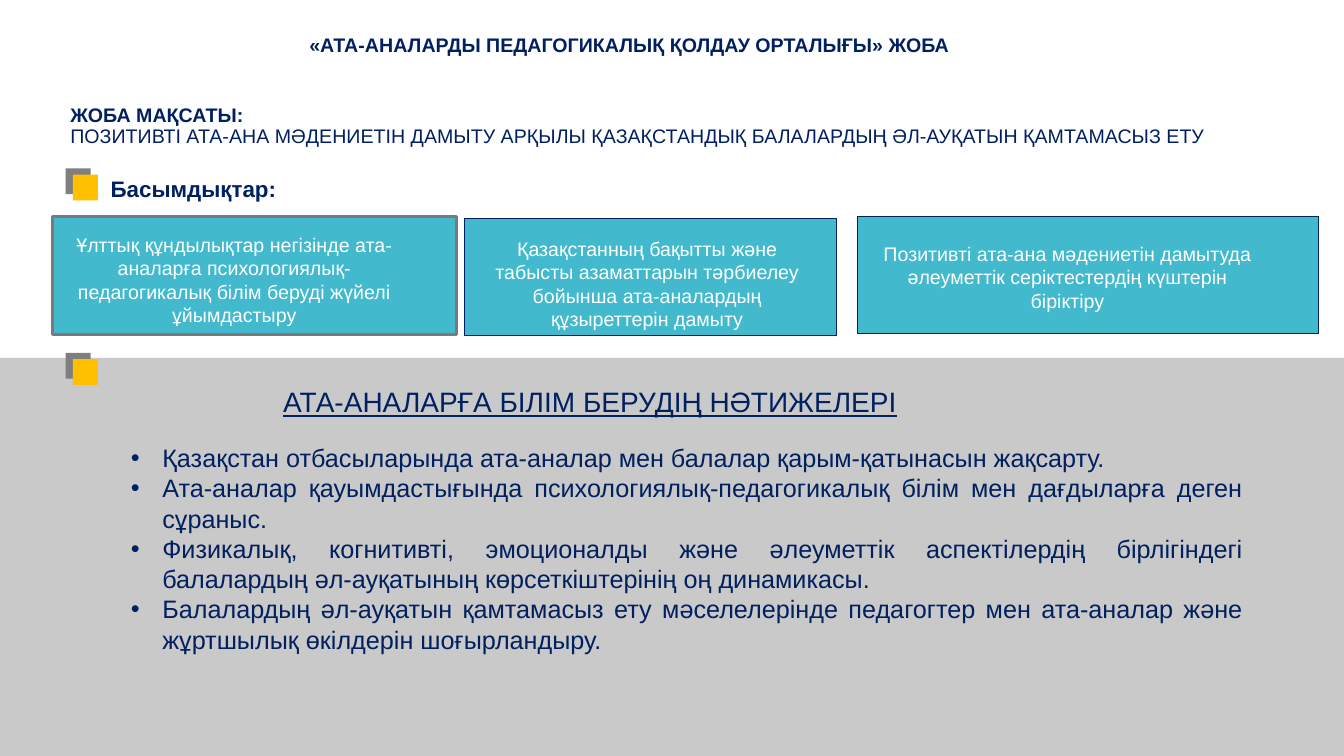
from lxml.etree import SubElement
from pptx import Presentation
from pptx.dml.color import RGBColor
from pptx.enum.shapes import MSO_SHAPE
from pptx.enum.text import MSO_AUTO_SIZE, PP_ALIGN
from pptx.oxml.ns import qn
from pptx.util import Pt

NAVY = "002060"
WHITE = "FFFFFF"
TEAL = "43B9CD"
GREY = "7A7A7A"

CARDS = [
    ((37.5, 154.8, 288.7, 84.2), GREY, 2, (31.7, 162.7, 271.4, 74.9),
     "Ұлттық құндылықтар негізінде ата-аналарға психологиялық-педагогикалық "
     "білім беруді жүйелі ұйымдастыру"),
    ((331.9, 156.2, 265.7, 83.5), NAVY, 1, (337, 165.6, 250.6, 74.9),
     "Қазақстанның бақытты және табысты азаматтарын тәрбиелеу бойынша "
     "ата-аналардың құзыреттерін дамыту"),
    ((612.7, 154.8, 329, 83.5), NAVY, 1, (615.6, 169.2, 293.8, 58.3),
     "Позитивті ата-ана мәдениетін дамытуда әлеуметтік серіктестердің "
     "күштерін біріктіру"),
]

RESULTS = [
    "Қазақстан отбасыларында ата-аналар мен балалар қарым-қатынасын жақсарту.",
    "Ата-аналар қауымдастығында психологиялық-педагогикалық білім мен "
    "дағдыларға деген сұраныс.",
    "Физикалық, когнитивті, эмоционалды және әлеуметтік аспектілердің "
    "бірлігіндегі балалардың әл-ауқатының көрсеткіштерінің оң динамикасы.",
    "Балалардың әл-ауқатын қамтамасыз ету мәселелерінде педагогтер мен "
    "ата-аналар және жұртшылық өкілдерін шоғырландыру.",
]


def color(code):
    return RGBColor.from_string(code)


def add_rect(slide, area, fill, line=None, width=1):
    rect = slide.shapes.add_shape(MSO_SHAPE.RECTANGLE, *map(Pt, area))
    rect.shadow.inherit = False
    rect.fill.solid()
    rect.fill.fore_color.rgb = color(fill)
    if line:
        rect.line.color.rgb = color(line)
        rect.line.width = Pt(width)
    else:
        rect.line.fill.background()


def add_box(slide, area):
    frame = slide.shapes.add_textbox(*map(Pt, area)).text_frame
    frame.word_wrap = True
    frame.auto_size = MSO_AUTO_SIZE.SHAPE_TO_FIT_TEXT
    return frame


def add_run(para, text, size, ink=NAVY, bold=False, under=False):
    run = para.add_run()
    run.text = text
    font = run.font
    font.name = "Arial"
    font.size = Pt(size)
    font.color.rgb = color(ink)
    font.bold = bold
    font.underline = under


def add_label(slide, area, text, size, align=PP_ALIGN.LEFT, **style):
    para = add_box(slide, area).paragraphs[0]
    para.alignment = align
    add_run(para, text, size, **style)


def add_mark(slide, top):
    add_rect(slide, (46.8, top, 18, 18.5), "7F7F7F")
    add_rect(slide, (52, top + 4.5, 18, 18.5), "FFC000")


def add_goal(slide):
    frame = add_box(slide, (43.2, 69.8, 897.8, 39.6))
    add_run(frame.paragraphs[0], "ЖОБА МАҚСАТЫ:", 14, bold=True)
    para = frame.add_paragraph()
    para.line_spacing = 0.9
    add_run(para, "ПОЗИТИВТІ АТА-АНА МӘДЕНИЕТІН ДАМЫТУ АРҚЫЛЫ ҚАЗАҚСТАНДЫҚ "
                  "БАЛАЛАРДЫҢ ӘЛ-АУҚАТЫН ҚАМТАМАСЫЗ ЕТУ", 14)


def add_list(slide, area, items):
    frame = add_box(slide, area)
    for index, item in enumerate(items):
        para = frame.add_paragraph() if index else frame.paragraphs[0]
        para.alignment = PP_ALIGN.JUSTIFY
        props = para._p.get_or_add_pPr()
        props.set("marL", str(Pt(22.5)))
        props.set("indent", str(Pt(-22.5)))
        SubElement(props, qn("a:buFont")).set("typeface", "Arial")
        SubElement(props, qn("a:buChar")).set("char", "•")
        add_run(para, item, 18)


def main():
    deck = Presentation()
    deck.slide_width, deck.slide_height = Pt(960), Pt(540)
    slide = deck.slides.add_slide(deck.slide_layouts[6])

    add_label(slide, (209.5, 20.2, 480.2, 24.5),
              "«АТА-АНАЛАРДЫ ПЕДАГОГИКАЛЫҚ ҚОЛДАУ ОРТАЛЫҒЫ» ЖОБА", 14,
              PP_ALIGN.CENTER, bold=True)
    add_goal(slide)
    add_mark(slide, 120.2)
    add_label(slide, (72, 121.7, 134, 26.6), "Басымдықтар:", 16, bold=True)
    for area, line, width, place, text in CARDS:
        add_rect(slide, area, TEAL, line, width)
        add_label(slide, place, text, 14, PP_ALIGN.CENTER, ink=WHITE)

    add_rect(slide, (0, 255.6, 960, 284.4), "C9C9C9")
    add_mark(slide, 252)
    add_label(slide, (195.1, 271.4, 480.2, 31.7),
              "АТА-АНАЛАРҒА БІЛІМ БЕРУДІҢ НӘТИЖЕЛЕРІ", 20, under=True)
    add_list(slide, (86.4, 312.5, 808.6, 159.8), RESULTS)
    deck.save("out.pptx")


if __name__ == "__main__":
    main()
